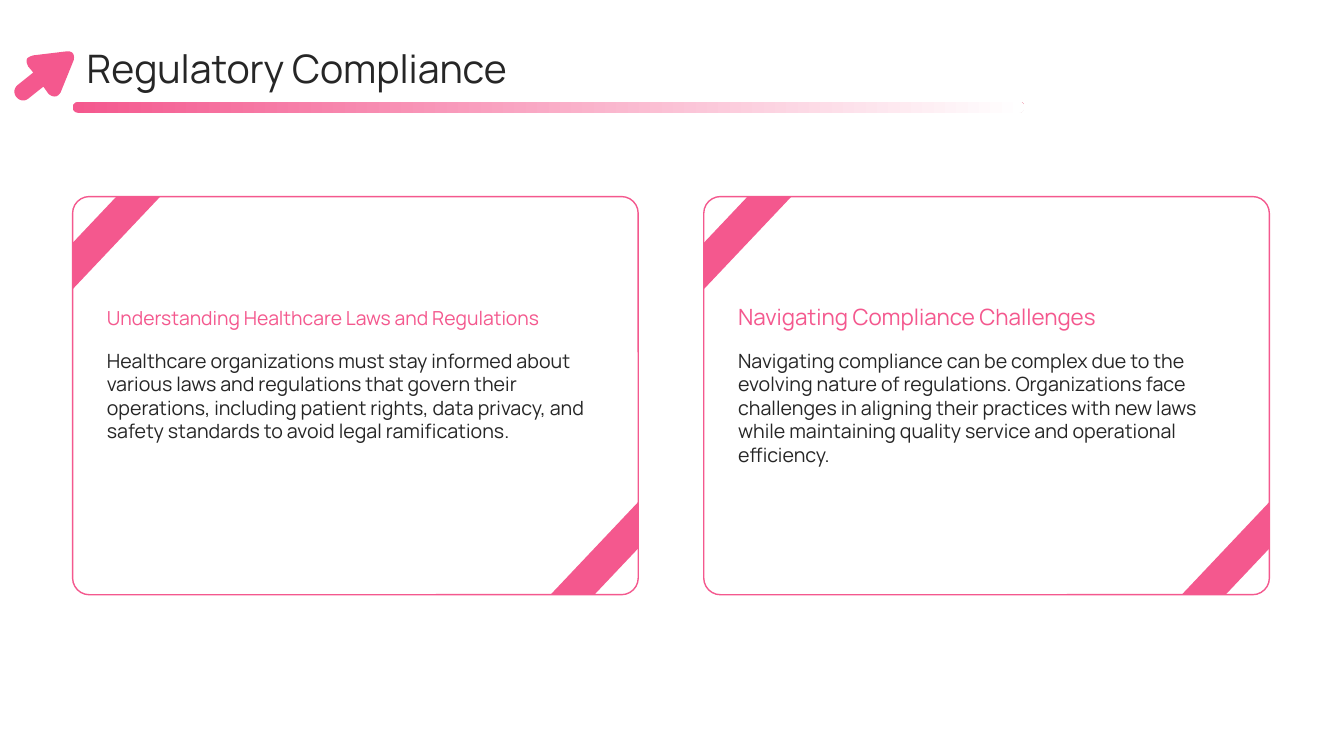
"""Build the Regulatory Compliance slide with two striped cards."""
from pptx import Presentation
from pptx.dml.color import RGBColor
from pptx.enum.shapes import MSO_SHAPE
from pptx.enum.text import MSO_ANCHOR, MSO_AUTO_SIZE, PP_ALIGN
from pptx.oxml.ns import qn
from pptx.util import Inches, Pt

THEME = {
    "font": "Manrope",
    "pink": RGBColor(0xF4, 0x58, 0x8E),
    "ink": RGBColor(0x26, 0x26, 0x26),
    "white": RGBColor(0xFF, 0xFF, 0xFF),
    "title": 28,
    "body": 14,
}
LEFT, TOP, CARD_W, CARD_H, PITCH = 0.72, 1.95, 5.61, 3.95, 6.26
STRIPE_W, STRIPE_H, PAD, TEXT_W = 0.87, 0.92, 0.34, 5.02
CARDS = [
    ("Understanding Healthcare Laws and Regulations", 13.8,
     "Healthcare organizations must stay informed about various laws and "
     "regulations that govern their operations, including patient rights, "
     "data privacy, and safety standards to avoid legal ramifications."),
    ("Navigating Compliance Challenges", 16,
     "Navigating compliance can be complex due to the evolving nature of "
     "regulations. Organizations face challenges in aligning their practices "
     "with new laws while maintaining quality service and operational "
     "efficiency."),
]
ARROW = [
    [(0.27, 0.58), (0.26, 0.6), (0.26, 0.62), (0.28, 0.66)],
    [(0.33, 0.72)],
    [(0.18, 0.84), (0.14, 0.87), (0.13, 0.92), (0.16, 0.96)],
    [(0.16, 0.96), (0.19, 1), (0.24, 1.01), (0.28, 0.98)],
    [(0.43, 0.86)],
    [(0.48, 0.93), (0.48, 0.93), (0.55, 1), (0.6, 0.92)],
    [(0.73, 0.6), (0.73, 0.6), (0.76, 0.5), (0.66, 0.51)],
    [(0.33, 0.55), (0.33, 0.55), (0.29, 0.56), (0.27, 0.58)],
]
STEPS = 8


def add_block(kind, x, y, w, h, fill):
    sp = s.shapes.add_shape(kind, Inches(x), Inches(y), Inches(w), Inches(h))
    sp.shadow.inherit = False
    sp.fill.solid()
    sp.fill.fore_color.rgb = fill
    sp.line.fill.background()
    return sp


def fill_text(ph, text, x, y, w, h, size, color, anchor):
    ph.left, ph.top, ph.width, ph.height = map(Inches, (x, y, w, h))
    tf = ph.text_frame
    tf.text = text
    tf.word_wrap = True
    tf.auto_size = MSO_AUTO_SIZE.NONE
    tf.vertical_anchor = anchor
    tf.margin_left = tf.margin_right = tf.margin_top = tf.margin_bottom = 0
    p = tf.paragraphs[0]
    p.alignment = PP_ALIGN.LEFT
    p.line_spacing = 1.0
    p.space_before = Pt(0)
    p.font.name = THEME["font"]
    p.font.size = Pt(size)
    p.font.bold = False
    p.font.color.rgb = color
    pPr = p._p.get_or_add_pPr()
    pPr.set("marL", "0")
    pPr.set("indent", "0")
    pPr.insert_element_before(
        pPr.makeelement(qn("a:buNone"), {}), "a:tabLst", "a:defRPr", "a:extLst")
    ph._element.getparent().append(ph._element)


prs = Presentation()
prs.slide_width, prs.slide_height = Inches(13.33), Inches(7.5)
s = prs.slides.add_slide(prs.slide_layouts.get_by_name("Comparison"))
slots = {ph.placeholder_format.idx: ph for ph in s.placeholders}

for i, (heading, size, body) in enumerate(CARDS):
    x = LEFT + i * PITCH
    card = add_block(MSO_SHAPE.ROUNDED_RECTANGLE, x, TOP, CARD_W, CARD_H, THEME["white"])
    card.adjustments[0] = 0.042
    card.line.color.rgb = THEME["pink"]
    card.line.width = Pt(1)
    corners = [(x, TOP, 0),
               (x + CARD_W - STRIPE_W, TOP + CARD_H - STRIPE_H, 180)]
    for cx, cy, turn in corners:
        stripe = add_block(MSO_SHAPE.DIAGONAL_STRIPE, cx, cy, STRIPE_W, STRIPE_H, THEME["pink"])
        stripe.rotation = turn
    fill_text(slots[2 + 2 * i], body, x + PAD, 3.46, TEXT_W, 1.87,
              THEME["body"], THEME["ink"], MSO_ANCHOR.TOP)
    fill_text(slots[1 + 2 * i], heading, x + PAD, 2.83, TEXT_W, 0.44,
              size, THEME["pink"], MSO_ANCHOR.BOTTOM)

fill_text(slots[0], "Regulatory Compliance", 0.86, 0.42, 11.67, 0.51,
          THEME["title"], THEME["ink"], MSO_ANCHOR.MIDDLE)

rule = add_block(MSO_SHAPE.ROUNDED_RECTANGLE, LEFT, 1.01, 9.44, 0.11, THEME["pink"])
rule.adjustments[0] = 0.5
rule.fill.gradient()
rule.fill.gradient_angle = 0
for stop, color, pos in zip(rule.fill.gradient_stops, (THEME["pink"], THEME["white"]), (0, 1)):
    stop.color.rgb = color
    stop.position = pos

outline = []
for seg in ARROW:
    if len(seg) == 1:
        outline.append(tuple(map(Inches, seg[0])))
        continue
    for k in range(STEPS + 1):
        t = k / STEPS
        weights = ((1 - t) ** 3, 3 * t * (1 - t) ** 2, 3 * t * t * (1 - t), t ** 3)
        outline.append(tuple(
            Inches(sum(w * pt[a] for w, pt in zip(weights, seg))) for a in (0, 1)))
fb = s.shapes.build_freeform(*outline[0])
fb.add_line_segments(outline[1:], close=True)
arrow = fb.convert_to_shape()
arrow.shadow.inherit = False
arrow.fill.solid()
arrow.fill.fore_color.rgb = THEME["pink"]
arrow.line.fill.background()

prs.save("out.pptx")
